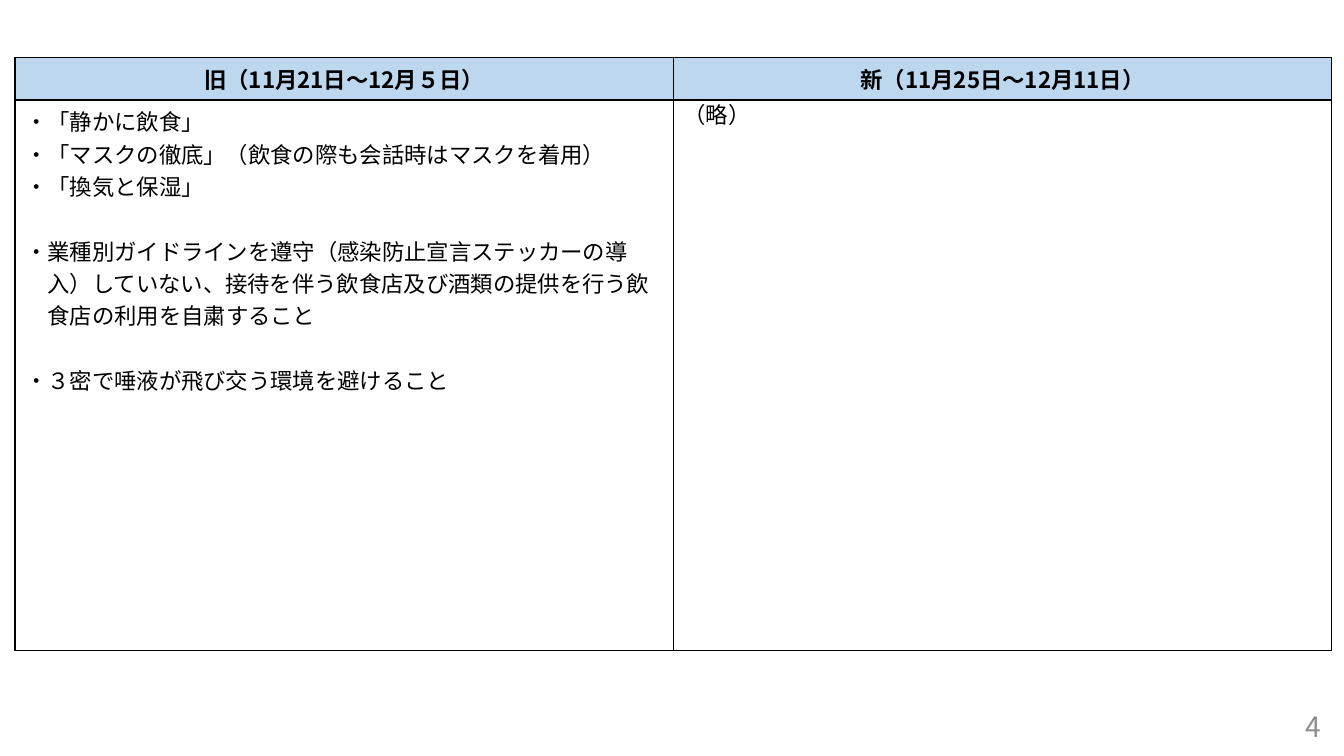
import pptx
import pptx.dml.color
import pptx.enum.text
import pptx.oxml
import pptx.oxml.ns
import pptx.util
from pptx.util import Cm, Pt

FONT = "Noto Sans CJK JP"
TEXT_SIZE = 16
LINE_HEIGHT = 23.2
BLACK, GREY, HEADER_BLUE = "000000", "8C8C8C", "BDD7EE"

HEADINGS = ["旧（11月21日～12月５日）", "新（11月25日～12月11日）"]
# Groups of bullets; each bullet is a list of lines.
OLD_RULES = [
    [
        ["・「静かに飲食」"],
        ["・「マスクの徹底」（飲食の際も会話時はマスクを着用）"],
        ["・「換気と保湿」"],
    ],
    [[
        "・業種別ガイドラインを遵守（感染防止宣言ステッカーの導",
        "入）していない、接待を伴う飲食店及び酒類の提供を行う飲",
        "食店の利用を自粛すること",
    ]],
    [["・３密で唾液が飛び交う環境を避けること"]],
]
NEW_RULES = "（略）"
PAGE_NUMBER = "4"

TABLE_LEFT, TABLE_TOP = 0.38, 1.45
COLUMN_WIDTH = 16.59
ROW_HEIGHTS = [0.91, 13.87]


def color(value):
    return pptx.dml.color.RGBColor.from_string(value)


def add_span(para, text, size=TEXT_SIZE, ink=BLACK, bold=False):
    span = para.add_run()
    span.text = text
    span.font.name = FONT
    span.font.size = Pt(size)
    span.font.bold = bold
    span.font.color.rgb = color(ink)
    east_asian = pptx.oxml.parse_xml(
        f'<a:ea {pptx.oxml.ns.nsdecls("a")} typeface="{FONT}"/>')
    span.font._element.find(pptx.oxml.ns.qn("a:latin")).addnext(east_asian)


def outline(cell):
    """Draw a thin black border on all four sides of a cell."""
    properties = cell._tc.get_or_add_tcPr()
    for position, side in enumerate(["lnL", "lnR", "lnT", "lnB"]):
        properties.insert(position, pptx.oxml.parse_xml(
            f'<a:{side} {pptx.oxml.ns.nsdecls("a")} w="{Pt(1)}"><a:solidFill>'
            f'<a:srgbClr val="{BLACK}"/></a:solidFill></a:{side}>'))


def add_rules(frame):
    para = None
    for group_index, group in enumerate(OLD_RULES):
        for rule_index, lines in enumerate(group):
            para = frame.add_paragraph() if para else frame.paragraphs[0]
            properties = para._p.get_or_add_pPr()
            properties.set("marL", str(Pt(TEXT_SIZE)))
            properties.set("indent", str(-Pt(TEXT_SIZE)))
            if group_index and not rule_index:
                para.space_before = Pt(LINE_HEIGHT)
            for line_index, line in enumerate(lines):
                if line_index:
                    para.add_line_break()
                add_span(para, line)


def add_comparison(page):
    table = page.shapes.add_table(
        2, 2, Cm(TABLE_LEFT), Cm(TABLE_TOP),
        Cm(2 * COLUMN_WIDTH), Cm(sum(ROW_HEIGHTS))).table
    table.horz_banding = False
    for column in table.columns:
        column.width = Cm(COLUMN_WIDTH)
    for row, height in zip(table.rows, ROW_HEIGHTS):
        row.height = Cm(height)
    for cell in table.iter_cells():
        cell.fill.background()
        outline(cell)

    for column, heading in enumerate(HEADINGS):
        cell = table.cell(0, column)
        cell.fill.solid()
        cell.fill.fore_color.rgb = color(HEADER_BLUE)
        para = cell.text_frame.paragraphs[0]
        para.alignment = pptx.enum.text.PP_ALIGN.CENTER
        add_span(para, heading, bold=True)

    add_rules(table.cell(1, 0).text_frame)
    para = table.cell(1, 1).text_frame.paragraphs[0]
    para.line_spacing = Pt(18)
    add_span(para, NEW_RULES)


def add_page_number(page):
    box = page.shapes.add_textbox(Cm(25.93), Cm(17.78), Cm(7.62), Cm(1.02))
    frame = box.text_frame
    frame.word_wrap = True
    frame.vertical_anchor = pptx.enum.text.MSO_ANCHOR.MIDDLE
    para = frame.paragraphs[0]
    para.alignment = pptx.enum.text.PP_ALIGN.RIGHT
    add_span(para, PAGE_NUMBER, size=20, ink=GREY)


def main():
    deck = pptx.Presentation()
    deck.slide_width, deck.slide_height = Cm(33.87), Cm(19.05)
    page = deck.slides.add_slide(deck.slide_layouts[6])
    add_comparison(page)
    add_page_number(page)
    deck.save("out.pptx")


if __name__ == "__main__":
    main()
